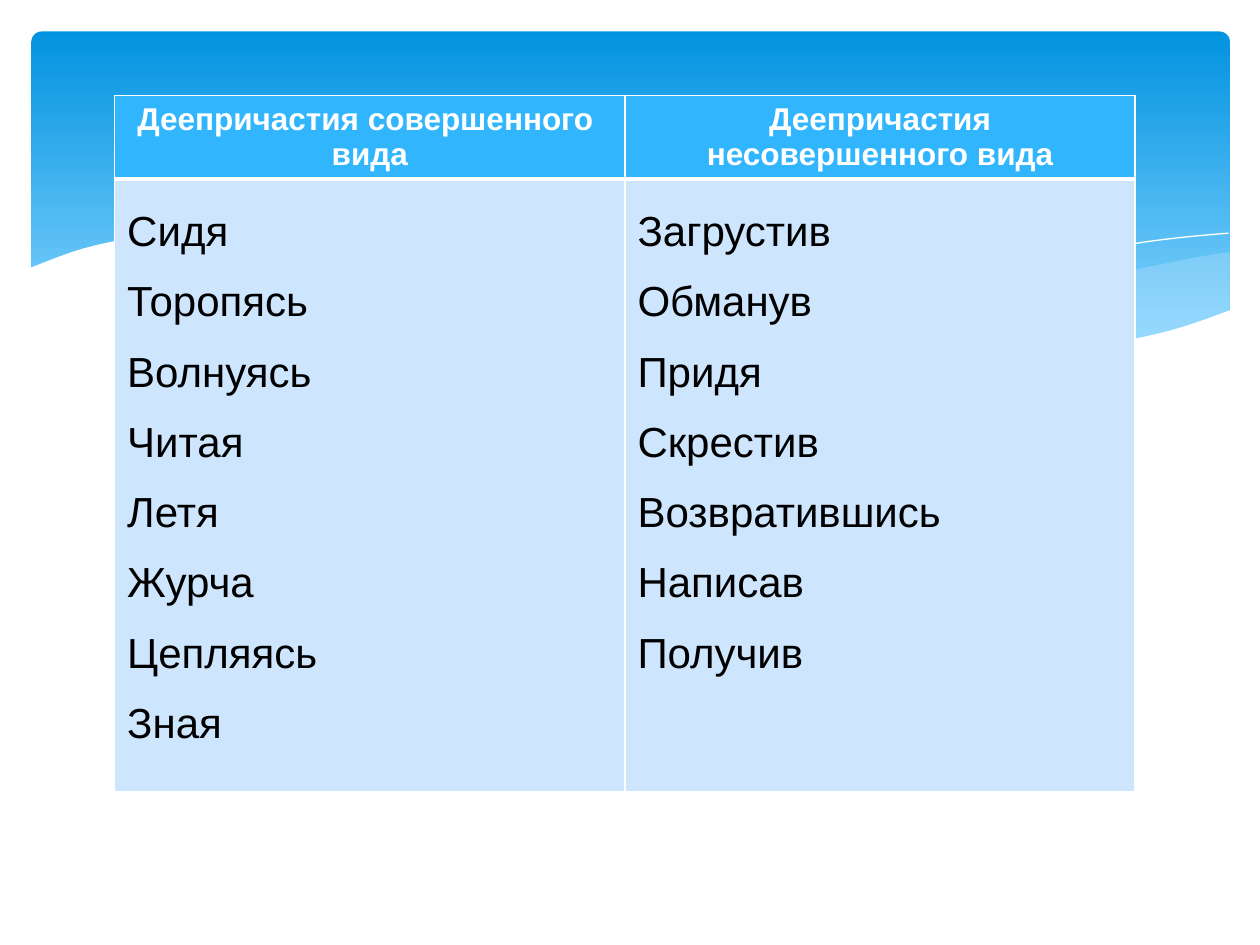
from dataclasses import dataclass

import pptx
import pptx.dml.color
import pptx.enum.shapes
import pptx.enum.text
import pptx.oxml
import pptx.oxml.ns
import pptx.util

Inches = pptx.util.Inches
Pt = pptx.util.Pt
Point = tuple[float, float]

WHITE = "FFFFFF"
SKY = "C6E7FC"
HEADER_BLUE = "31B6FD"
BODY_BLUE = "CEE5FE"


@dataclass(frozen=True)
class Wave:
    """A curved band (with opacity) or a hairline, made of smooth edges."""
    edges: tuple[tuple[Point, ...], ...]
    fill: str | None = None
    opacity: int = 100


@dataclass(frozen=True)
class Column:
    heading: tuple[str, ...]
    words: tuple[str, ...]


WAVES = (
    Wave((((9.76, 2), (9.35, 2.07), (8.61, 2.23), (7.79, 2.42), (6.61, 2.65)),
          ((6.61, 2.65), (7.19, 2.72), (7.69, 2.77), (8.14, 2.78), (8.63, 2.75),
           (9.13, 2.67), (9.49, 2.57), (9.76, 2.47))), SKY, 29),
    Wave((((8.93, 2.73), (8.07, 2.6), (7.06, 2.4), (6.29, 2.22), (5.55, 2.05),
           (4.89, 1.94), (4.2, 1.87), (3.61, 1.85), (2.86, 1.91)),
          ((2.86, 1.91), (3.62, 2.03), (4.49, 2.22), (5.3, 2.4), (6.18, 2.58),
           (6.95, 2.7), (7.61, 2.77), (8.18, 2.78), (8.93, 2.73))), SKY, 40),
    Wave((((3.09, 1.95), (3.53, 1.89), (4.16, 1.87), (4.89, 1.9), (5.82, 2),
           (6.65, 2.13), (7.6, 2.33), (8.31, 2.51), (9.07, 2.72)),)),
    Wave((((6.13, 2.57), (6.95, 2.35), (7.76, 2.16), (8.66, 1.99), (9.24, 1.9),
           (9.75, 1.85)),)),
    Wave((((9.77, 2.46), (9.3, 2.62), (8.75, 2.73), (8.09, 2.77), (7.26, 2.72),
           (6.48, 2.62), (5.55, 2.45), (4.47, 2.2), (3.65, 2.02), (2.92, 1.9),
           (2.3, 1.85), (1.77, 1.84), (1.19, 1.87), (0.67, 1.97), (0.23, 2.13)),
          ((0.23, 3.29), (9.77, 3.29))), WHITE),
)

COLUMNS = (
    Column(("Деепричастия совершенного ", "вида"),
           ("Сидя", "Торопясь", "Волнуясь", "Читая", "Летя", "Журча",
            "Цепляясь", "Зная")),
    Column(("Деепричастия несовершенного вида",),
           ("Загрустив", "Обманув", "Придя", "Скрестив", "Возвратившись",
            "Написав", "Получив")),
)


def rgb(color: str) -> pptx.dml.color.RGBColor:
    return pptx.dml.color.RGBColor.from_string(color)


def smooth(points: tuple[Point, ...], steps: int = 5) -> list[Point]:
    """Sample a Catmull-Rom curve through the points."""
    padded = (points[0], *points, points[-1])
    curve = [points[0]]
    for a, b, c, d in zip(padded, padded[1:], padded[2:], padded[3:]):
        for step in range(1, steps + 1):
            t = step / steps
            curve.append(tuple(
                0.5 * (2 * q + (r - p) * t + (2 * p - 5 * q + 4 * r - s) * t**2
                       + (3 * q - p - 3 * r + s) * t**3)
                for p, q, r, s in zip(a, b, c, d)))
    return curve


def draw_wave(slide, wave: Wave) -> None:
    outline = [(Inches(x), Inches(y)) for edge in wave.edges for x, y in smooth(edge)]
    builder = slide.shapes.build_freeform(*outline[0])
    builder.add_line_segments(outline[1:], close=wave.fill is not None)
    band = builder.convert_to_shape()
    band.shadow.inherit = False
    if wave.fill is None:
        band.fill.background()
        band.line.color.rgb = rgb(WHITE)
        band.line.width = Pt(0)
        return
    band.line.fill.background()
    band.fill.solid()
    band.fill.fore_color.rgb = rgb(wave.fill)
    if wave.opacity < 100:
        tint = band.fill._xPr.find(".//" + pptx.oxml.ns.qn("a:srgbClr"))
        alpha = pptx.oxml.parse_xml(
            f'<a:alpha {pptx.oxml.ns.nsdecls("a")} val="{wave.opacity * 1000}"/>')
        tint.append(alpha)


def draw_banner(slide) -> None:
    banner = slide.shapes.add_shape(
        pptx.enum.shapes.MSO_SHAPE.ROUNDED_RECTANGLE,
        Inches(0.25), Inches(0.25), Inches(9.51), Inches(2.7))
    banner.adjustments[0] = 0.03
    banner.shadow.inherit = False
    banner.line.fill.background()
    banner.fill.gradient()
    banner.fill.gradient_angle = 270
    stops = ((0, "0293E0"), (0.9, "83D3FE"))
    for stop, (position, color) in zip(banner.fill.gradient_stops, stops):
        stop.position = position
        stop.color.rgb = rgb(color)


def write(frame, lines: tuple[str, ...], *, size: int, color: str,
          bold: bool = False, align=None, spacing: float | None = None) -> None:
    for index, line in enumerate(lines):
        paragraph = frame.add_paragraph() if index else frame.paragraphs[0]
        paragraph.alignment = align
        paragraph.line_spacing = spacing
        run = paragraph.add_run()
        run.text = line
        run.font.name = "Arial"
        run.font.size = Pt(size)
        run.font.bold = bold
        run.font.color.rgb = rgb(color)


def style_cell(cell, fill: str, *, top: int = 1, bottom: int = 1) -> None:
    cell.fill.solid()
    cell.fill.fore_color.rgb = rgb(fill)
    properties = cell._tc.get_or_add_tcPr()
    widths = {"L": 1, "R": 1, "T": top, "B": bottom}
    for index, (side, width) in enumerate(widths.items()):
        properties.insert(index, pptx.oxml.parse_xml(
            f'<a:ln{side} {pptx.oxml.ns.nsdecls("a")} w="{Pt(width)}">'
            f'<a:solidFill><a:srgbClr val="{WHITE}"/></a:solidFill></a:ln{side}>'))


def draw_table(slide, columns: tuple[Column, ...]) -> None:
    heights = (0.65, 4.86)
    table = slide.shapes.add_table(
        len(heights), len(columns),
        Inches(0.91), Inches(0.76), Inches(8.1), Inches(sum(heights))).table
    for row, height in zip(table.rows, heights):
        row.height = Inches(height)
    for index, column in enumerate(columns):
        heading, body = table.cell(0, index), table.cell(1, index)
        style_cell(heading, HEADER_BLUE, bottom=3)
        write(heading.text_frame, column.heading, size=18, color=WHITE, bold=True,
              align=pptx.enum.text.PP_ALIGN.CENTER)
        style_cell(body, BODY_BLUE, top=3)
        write(body.text_frame, column.words, size=24, color="000000", spacing=1.5)


def main() -> None:
    deck = pptx.Presentation()
    deck.slide_width, deck.slide_height = Inches(10), Inches(7.5)
    slide = deck.slides.add_slide(deck.slide_layouts[6])
    # Decorated header
    draw_banner(slide)
    for wave in WAVES:
        draw_wave(slide, wave)
    # Table of participles
    draw_table(slide, COLUMNS)
    deck.save("out.pptx")


if __name__ == "__main__":
    main()
